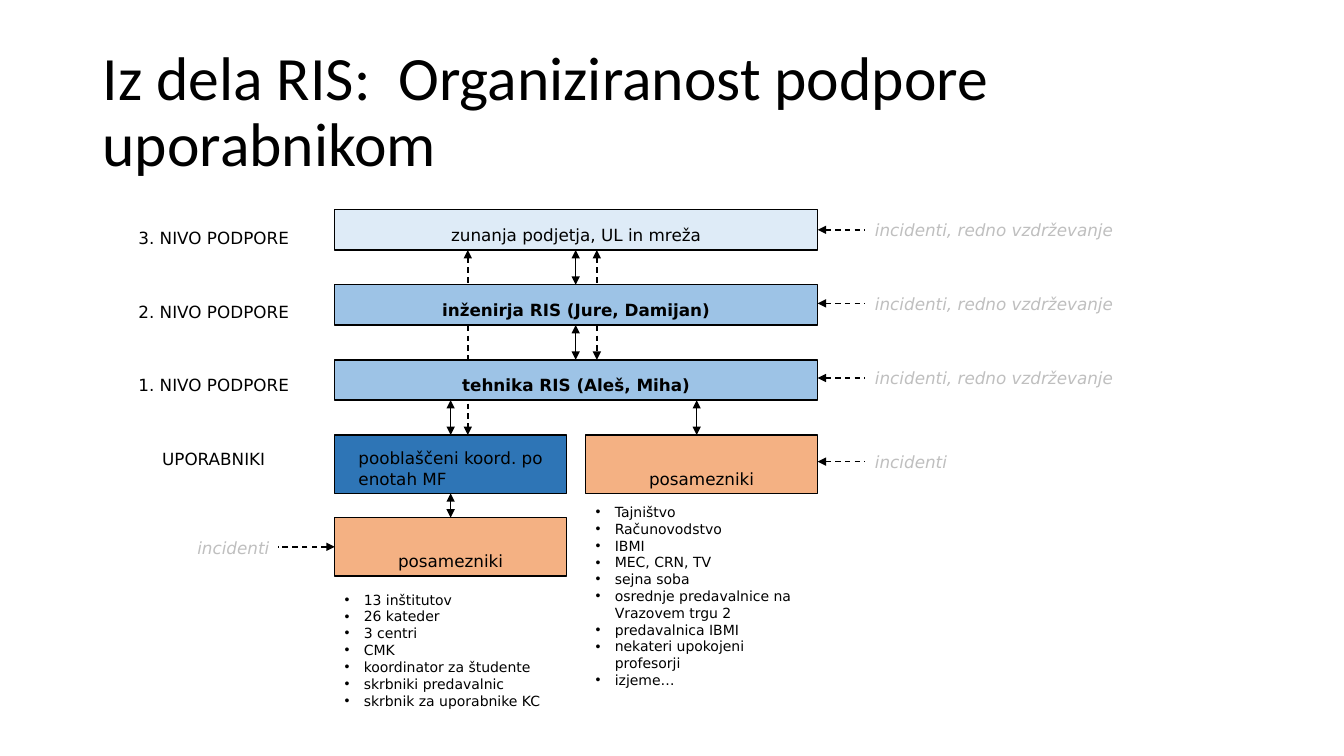
from collections import namedtuple

from lxml import etree
from pptx import Presentation
from pptx.dml.color import RGBColor
from pptx.enum.dml import MSO_LINE
from pptx.enum.shapes import MSO_CONNECTOR, MSO_SHAPE
from pptx.enum.text import MSO_ANCHOR, PP_ALIGN
from pptx.oxml.ns import qn
from pptx.util import Inches, Pt

RECTANGLE, STRAIGHT = MSO_SHAPE.RECTANGLE, MSO_CONNECTOR.STRAIGHT
DASH = MSO_LINE.DASH
TOP, MIDDLE, BOTTOM = MSO_ANCHOR.TOP, MSO_ANCHOR.MIDDLE, MSO_ANCHOR.BOTTOM
LEFT, RIGHT = PP_ALIGN.LEFT, PP_ALIGN.RIGHT

BLACK = RGBColor(0x00, 0x00, 0x00)
GREY = RGBColor(0xBF, 0xBF, 0xBF)
PALE_BLUE = RGBColor(0xDE, 0xEB, 0xF7)
LIGHT_BLUE = RGBColor(0x9D, 0xC3, 0xE6)
DARK_BLUE = RGBColor(0x2E, 0x75, 0xB6)
ORANGE = RGBColor(0xF4, 0xB1, 0x83)

PLAIN = {"name": "DejaVu Sans", "size": Pt(12)}
BOLD = {**PLAIN, "bold": True}
NOTE = {**PLAIN, "italic": True}
LIST = {**PLAIN, "size": Pt(10)}
TITLE = {"name": "Calibri", "size": Pt(44)}

Box = namedtuple("Box", "left top width height")

# Grid of the diagram, in inches
ROW_PITCH, BAR_HEIGHT = 0.745, 0.4
USER_WIDTH, USER_HEIGHT = 2.3, 0.58
LABEL_PITCH = 0.73
BULLET_INDENT = Inches(0.19)

LEVELS = [("zunanja podjetja, UL in mreža", PALE_BLUE, PLAIN),
          ("inženirja RIS (Jure, Damijan)", LIGHT_BLUE, BOLD),
          ("tehnika RIS (Aleš, Miha)", LIGHT_BLUE, BOLD)]
LABELS = ["3. NIVO PODPORE", "2. NIVO PODPORE", "1. NIVO PODPORE", "UPORABNIKI"]
NOTES = [(0, "incidenti, redno vzdrževanje"), (0.73, "incidenti, redno vzdrževanje"),
         (1.47, "incidenti, redno vzdrževanje"), (2.3, "incidenti")]
UNITS = ["13 inštitutov", "26 kateder", "3 centri", "CMK", "koordinator za študente",
         "skrbniki predavalnic", "skrbnik za uporabnike KC"]
INDIVIDUALS = ["Tajništvo", "Računovodstvo", "IBMI", "MEC, CRN, TV", "sejna soba",
               "osrednje predavalnice na Vrazovem trgu 2", "predavalnica IBMI",
               "nekateri upokojeni profesorji", "izjeme…"]


def write(shape, lines, font, color=BLACK, anchor=MIDDLE, align=LEFT,
          centred=False, bullets=False, spacing=None):
    frame = shape.text_frame
    frame.word_wrap = True
    frame.vertical_anchor = anchor
    if centred:  # centres the text block, while its lines stay left-aligned
        frame._txBody.bodyPr.set("anchorCtr", "1")
    for index, line in enumerate(lines):
        para = frame.add_paragraph() if index else frame.paragraphs[0]
        para.alignment = align
        if spacing:
            para.line_spacing = spacing
        span = para.add_run()
        span.text = line
        for name, value in font.items():
            setattr(span.font, name, value)
        span.font.color.rgb = color
        if bullets:
            properties = para._p.get_or_add_pPr()
            properties.set("marL", str(BULLET_INDENT))
            properties.set("indent", str(-BULLET_INDENT))
            etree.SubElement(properties, qn("a:buFont")).set("typeface", "Arial")
            etree.SubElement(properties, qn("a:buChar")).set("char", "•")


def add_text(page, box, lines, font, **layout):
    shape = page.shapes.add_textbox(*map(Inches, box))
    write(shape, lines, font, **layout)


def add_block(page, box, text, fill, font=PLAIN):
    shape = page.shapes.add_shape(RECTANGLE, *map(Inches, box))
    shape.shadow.inherit = False
    shape.fill.solid()
    shape.fill.fore_color.rgb = fill
    shape.line.color.rgb = BLACK
    shape.line.width = Pt(1)
    write(shape, [text], font, anchor=BOTTOM, centred=True)


def add_arrow(page, start, end, dashed=False, both=True):
    arrow = page.shapes.add_connector(STRAIGHT, *map(Inches, (*start, *end)))
    arrow.line.color.rgb = BLACK
    arrow.line.width = Pt(1)
    if dashed:
        arrow.line.dash_style = DASH
    outline = arrow.line._get_or_add_ln()
    for tag in ("a:headEnd", "a:tailEnd") if both else ("a:headEnd",):
        etree.SubElement(outline, qn(tag)).set("type", "triangle")
    etree.SubElement(arrow._element.spPr, qn("a:effectLst"))


def add_links(page, box):
    """Dashed links pass behind the bars, solid ones join neighbours."""
    gaps = [(box.top + row * ROW_PITCH + BAR_HEIGHT, box.top + (row + 1) * ROW_PITCH)
            for row in range(3)]
    dashed = [(1.32, 0, 2), (2.6, 0, 1)]
    solid = [(2.39, 0, 0), (2.39, 1, 1), (1.15, 2, 2), (3.59, 2, 2)]
    for links, is_dashed in ((dashed, True), (solid, False)):
        for offset, first, last in links:
            x = box.left + offset
            add_arrow(page, (x, gaps[first][0]), (x, gaps[last][1]), is_dashed)


def add_levels(page, box):
    for row, (text, fill, font) in enumerate(LEVELS):
        bar = Box(box.left, box.top + row * ROW_PITCH, box.width, BAR_HEIGHT)
        add_block(page, bar, text, fill, font)


def add_users(page, box):
    right = box.left + box.width - USER_WIDTH
    lower = box.top + 0.82
    middle = box.left + USER_WIDTH / 2
    size = (USER_WIDTH, USER_HEIGHT)
    add_block(page, Box(box.left, box.top, *size), "pooblaščeni koord. po enotah MF", DARK_BLUE)
    add_block(page, Box(right, box.top, *size), "posamezniki", ORANGE)
    add_block(page, Box(box.left, lower, *size), "posamezniki", ORANGE)
    add_arrow(page, (middle, box.top + USER_HEIGHT), (middle, lower))
    # Lists below the two groups of individuals
    for left, top, height, lines in ((box.left, box.top + 1.5, 1.37, UNITS),
                                     (right, box.top + 0.63, 2, INDIVIDUALS)):
        add_text(page, Box(left, top, USER_WIDTH, height), lines, LIST,
                 anchor=TOP, bullets=True)
    # Incidents arriving from the left
    y = lower + USER_HEIGHT / 2
    add_arrow(page, (box.left, y), (box.left - 0.56, y), dashed=True, both=False)
    add_text(page, Box(box.left - 1.73, y - 0.19, 1.18, BAR_HEIGHT), ["incidenti"], NOTE,
             color=GREY, align=RIGHT)


def add_labels(page, box):
    for row, label in enumerate(LABELS):
        cell = Box(box.left, box.top + row * LABEL_PITCH, box.width, BAR_HEIGHT)
        add_text(page, cell, [label], PLAIN, anchor=BOTTOM, centred=True)


def add_notes(page, box):
    arrow_length = 0.47
    for offset, note in NOTES:
        top = box.top + offset
        y = top + BAR_HEIGHT / 2
        text_left = box.left + arrow_length
        add_arrow(page, (box.left, y), (text_left, y), dashed=True, both=False)
        add_text(page, Box(text_left, top, box.width - arrow_length, BAR_HEIGHT),
                 [note], NOTE, color=GREY)


def main():
    deck = Presentation()
    deck.slide_width, deck.slide_height = Inches(13.33), Inches(7.5)
    page = deck.slides.add_slide(deck.slide_layouts[6])
    add_text(page, Box(0.92, 0.4, 11.5, 1.45),
             ["Iz dela RIS:  Organiziranost podpore uporabnikom"], TITLE, spacing=0.9)
    diagram = Box(3.32, 2.08, 4.79, 2.82)
    add_links(page, diagram)
    add_levels(page, diagram)
    add_users(page, Box(diagram.left, diagram.top + 3 * ROW_PITCH, diagram.width, 2.87))
    add_labels(page, Box(0.97, 2.11, 2.3, 2.59))
    add_notes(page, Box(diagram.left + diagram.width, diagram.top, 3.23, 2.7))
    deck.save("out.pptx")


if __name__ == "__main__":
    main()
